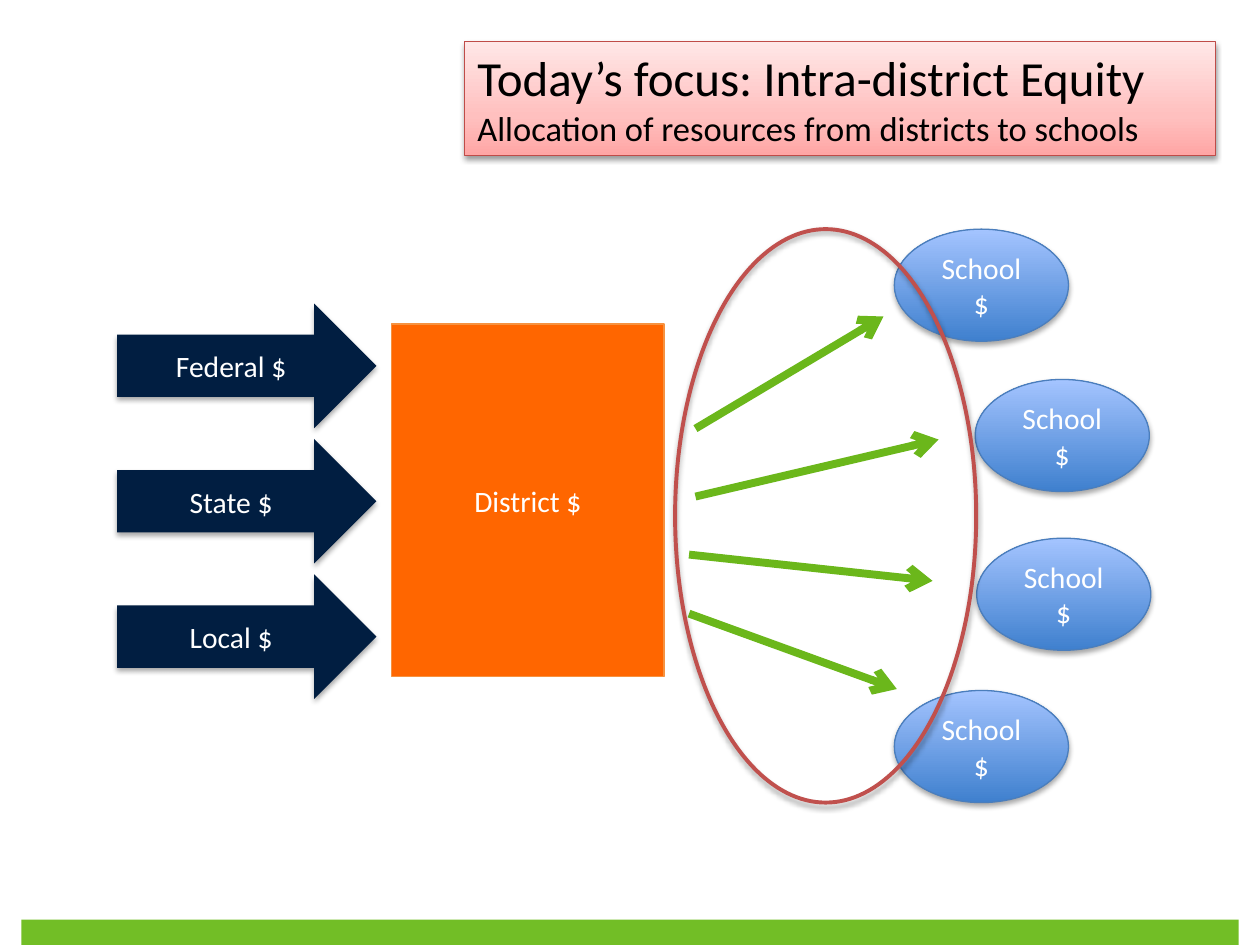
"""Build a slide on how funds flow from districts to schools."""
from typing import NamedTuple, Optional

from lxml.etree import SubElement
from pptx import Presentation
from pptx.dml.color import RGBColor
from pptx.enum.shapes import MSO_CONNECTOR as Connector, MSO_SHAPE as Preset
from pptx.enum.text import MSO_ANCHOR as Anchor, MSO_AUTO_SIZE as AutoSize, PP_ALIGN as Align
from pptx.oxml.ns import qn
from pptx.util import Cm, Pt

COLORS = {
    "bar": "72BE26", "source": "011E41", "district": "FF6600", "district_line": "F69240",
    "school_low": "3F80CE", "school_high": "A4C4FF", "school_line": "4B7EBC",
    "flow": "6BB71B", "ring": "C0504D", "title_line": "BF4C48", "title_low": "FFA6A5",
    "title_mid": "FFC0BF", "title_high": "FFE7E7", "white": "FFFFFF", "black": "000000",
}
SCHOOL_STOPS = ((0, "school_low"), (100, "school_high"))
TITLE_STOPS = ((0, "title_low"), (35, "title_mid"), (100, "title_high"))


class Box(NamedTuple):
    left: float
    top: float
    width: float
    height: float


class Style(NamedTuple):
    fill: Optional[str] = None
    stops: tuple = ()
    line: Optional[str] = None
    weight: float = 0.75
    shadow_alpha: int = 0


class Flow(NamedTuple):
    x1: float
    y1: float
    x2: float
    y2: float


SOURCE_STYLE = Style(fill="source", shadow_alpha=35)
SCHOOL_STYLE = Style(stops=SCHOOL_STOPS, line="school_line", shadow_alpha=35)
SOURCES = ("Federal $", "State $", "Local $")
SOURCE_TOP, SOURCE_PITCH = 6.12, 2.73
SCHOOLS = ((18.03, 4.62), (19.66, 7.65), (19.69, 10.85), (18.03, 13.92))
FLOWS = (
    Flow(14.02, 8.64, 17.81, 6.38),
    Flow(14.02, 10.01, 18.92, 8.86),
    Flow(13.89, 11.18, 18.8, 11.71),
    Flow(13.89, 12.37, 18.08, 13.89),
)


def rgb(name: str) -> RGBColor:
    """Return the named colour."""
    return RGBColor.from_string(COLORS[name])


def apply_gradient(shape, stops: tuple) -> None:
    """Fill a shape with stops that run from bottom to top."""
    shape.fill.gradient()
    shape.fill.gradient_angle = 90
    stop_list = shape._element.spPr.find(f"{qn('a:gradFill')}/{qn('a:gsLst')}")
    stop_list.clear()
    for percent, name in stops:
        stop = SubElement(stop_list, qn("a:gs"), pos=str(percent * 1000))
        SubElement(stop, qn("a:srgbClr"), val=COLORS[name])


def apply_style(shape, style: Style) -> None:
    """Set the fill, line and shadow of a shape."""
    if style.stops:
        apply_gradient(shape, style.stops)
    elif style.fill:
        shape.fill.solid()
        shape.fill.fore_color.rgb = rgb(style.fill)
    else:
        shape.fill.background()
    if style.line:
        shape.line.color.rgb = rgb(style.line)
        shape.line.width = Pt(style.weight)
    else:
        shape.line.fill.background()
    shape.shadow.inherit = False
    if style.shadow_alpha:
        effects = shape._element.spPr.find(qn("a:effectLst"))
        shadow = SubElement(effects, qn("a:outerShdw"), blurRad="40000", dist="23000",
                            dir="5400000", rotWithShape="0")
        color = SubElement(shadow, qn("a:srgbClr"), val=COLORS["black"])
        SubElement(color, qn("a:alpha"), val=str(style.shadow_alpha * 1000))


def write(paragraph, text: str, size: float, color: str, align: Align) -> None:
    """Write one formatted paragraph."""
    paragraph.text = text
    paragraph.alignment = align
    font = paragraph.font
    font.name, font.size, font.color.rgb = "Calibri", Pt(size), rgb(color)


def add_box(slide, preset: Preset, box: Box, style: Style, label: str = "") -> None:
    """Add a styled shape with an optional centred label."""
    shape = slide.shapes.add_shape(preset, *map(Cm, box))
    apply_style(shape, style)
    if label:
        shape.text_frame.word_wrap = True
        shape.text_frame.vertical_anchor = Anchor.MIDDLE
        write(shape.text_frame.paragraphs[0], label, 16.9, "white", Align.CENTER)


def add_flow(slide, flow: Flow) -> None:
    """Add an arrow from the district towards a school."""
    arrow = slide.shapes.add_connector(Connector.STRAIGHT, *map(Cm, flow))
    arrow.line.color.rgb = rgb("flow")
    arrow.line.width = Pt(4.5)
    properties = arrow._element.spPr
    SubElement(properties.find(qn("a:ln")), qn("a:tailEnd"), type="arrow")
    SubElement(properties, qn("a:effectLst"))


def fill_title(title, box: Box) -> None:
    """Place the title and write its heading and subheading."""
    title.left, title.top, title.width, title.height = map(Cm, box)
    apply_style(title, Style(stops=TITLE_STOPS, line="title_line", shadow_alpha=38))
    frame = title.text_frame
    frame.word_wrap = True
    frame.auto_size = AutoSize.NONE
    frame.vertical_anchor = Anchor.TOP
    write(frame.paragraphs[0], "Today’s focus: Intra-district Equity", 28, "black", Align.LEFT)
    write(frame.add_paragraph(), "Allocation of resources from districts to schools",
          19.7, "black", Align.LEFT)


def main() -> None:
    """Build and save the slide."""
    deck = Presentation()
    deck.slide_width, deck.slide_height = Cm(25.4), Cm(19.05)
    slide = deck.slides.add_slide(deck.slide_layouts[5])
    fill_title(slide.shapes.title, Box(9.37, 0.84, 15.14, 2.29))
    add_box(slide, Preset.RECTANGLE, Box(0.43, 18.54, 24.54, 0.51), Style(fill="bar"))
    for row, source in enumerate(SOURCES):
        add_box(slide, Preset.RIGHT_ARROW,
                Box(2.36, SOURCE_TOP + row * SOURCE_PITCH, 5.23, 2.51), SOURCE_STYLE, source)
    add_box(slide, Preset.RECTANGLE, Box(7.9, 6.53, 5.49, 7.11),
            Style(fill="district", line="district_line"), "District $")
    for left, top in SCHOOLS:
        add_box(slide, Preset.OVAL, Box(left, top, 3.51, 2.26), SCHOOL_STYLE, "School $")
    for flow in FLOWS:
        add_flow(slide, flow)
    add_box(slide, Preset.OVAL, Box(13.61, 4.62, 6.07, 11.56),
            Style(line="ring", weight=2.25, shadow_alpha=35))
    deck.save("out.pptx")


if __name__ == "__main__":
    main()
